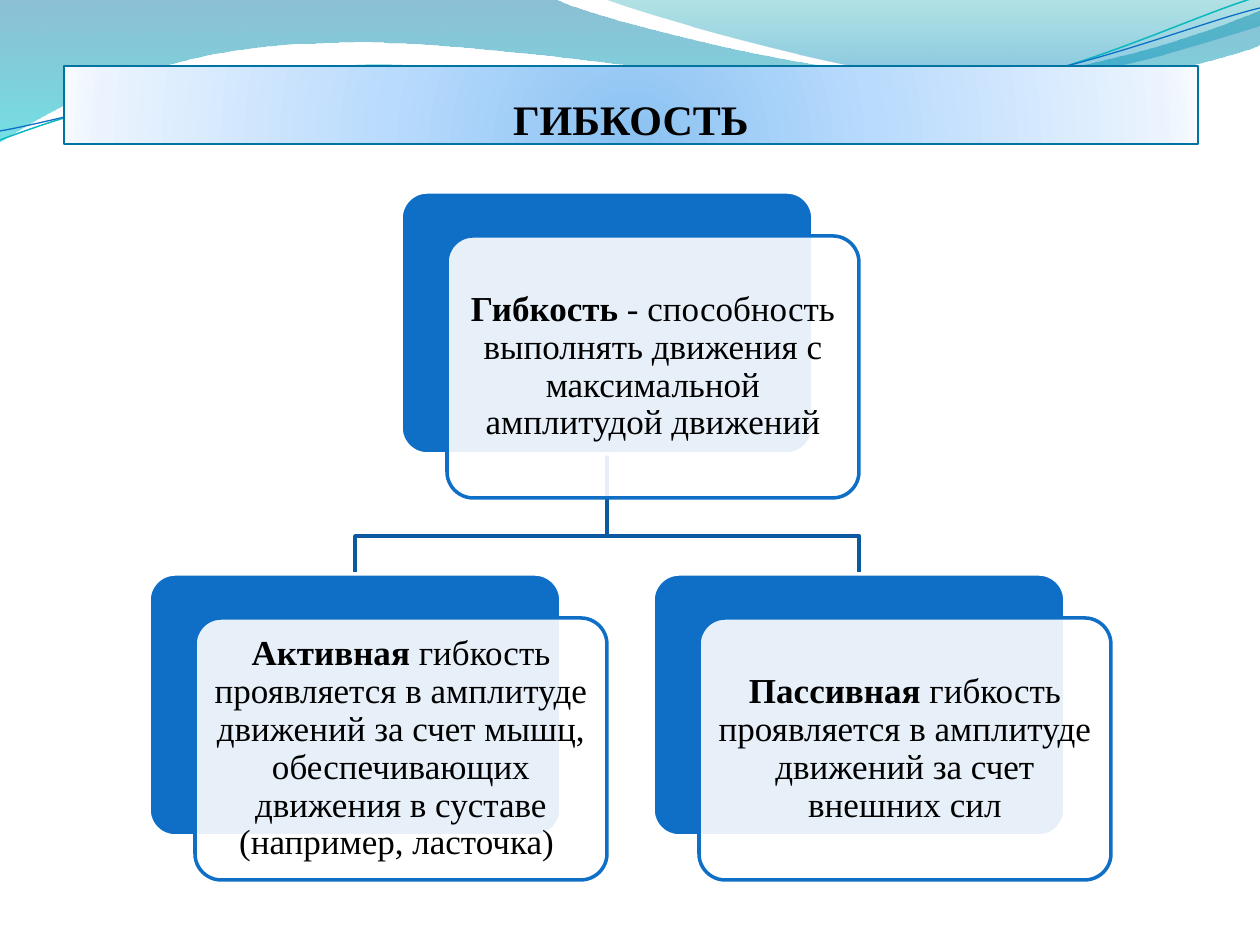
from lxml import etree
from pptx import Presentation
from pptx.dml.color import RGBColor
from pptx.enum.shapes import MSO_SHAPE
from pptx.enum.text import MSO_ANCHOR, MSO_AUTO_SIZE, PP_ALIGN
from pptx.oxml.ns import qn
from pptx.util import Pt

PX = 914400 / 126
FONT = "Times New Roman"
BLUE, DARK_BLUE, TEAL, WHITE, BLACK = "0F6FC6", "0C599F", "0074A1", "FFFFFF", "000000"
ROUNDED = MSO_SHAPE.ROUNDED_RECTANGLE
CENTER, MIDDLE, BOTTOM = PP_ALIGN.CENTER, MSO_ANCHOR.MIDDLE, MSO_ANCHOR.BOTTOM
TITLE_LAYOUT = 5

CARD_W, CARD_H = 412, 262
CARD_DX, CARD_DY = 46, 44
ROOT = (401, 192, "Гибкость",
        " - способность выполнять движения с максимальной амплитудой движений")
BRANCHES = [
    (149, 574, "Активная",
     " гибкость проявляется в амплитуде движений за счет мышц, "
     "обеспечивающих движения в суставе (например, ласточка) "),
    (653, 574, "Пассивная",
     " гибкость проявляется в амплитуде движений за счет внешних сил"),
]

# Outlines: a pair is a straight step, six numbers are a Bezier curve.
WAVES = [
    ([(0, 0), (554, -1), (600, 21, 837, 79, 955, 79), (1075, 79, 1207, 33, 1260, 11),
      (1261, 45), (1239, 55, 1096, 96, 940, 95), (784, 95, 481, 35, 324, 43),
      (163, 45, 58, 105, -1, 142)],
     [(0, TEAL, 45), (100, "00C6CF", 55)]),
    ([(604, -1), (641, 14, 859, 78, 969, 82), (1079, 87, 1211, 40, 1260, 26), (1260, 0)],
     [(0, "00A1A9", 30), (80, "008BBF", 45)]),
]
WAVE_LINES = [
    ([(0, 140), (60, 117, 199, 72, 349, 66), (498, 59, 747, 112, 898, 101),
      (1049, 89, 1182, 19, 1257, -3)], "0AB8BF", 0.85),
    ([(0, 131), (59, 121, 207, 77, 357, 71), (508, 64, 752, 106, 903, 94),
      (1053, 84, 1186, 26, 1260, 8)], BLUE, 0.75),
]
TITLE_STOPS = [(0, "8BC2F1", 100), (43, "B9DBFD", 100),
               (93, "EAF3FE", 100), (100, "F8FBFF", 100)]


def px(n):
    return round(n * PX)


def rgb(value):
    return RGBColor.from_string(value)


def add_alpha(clr, opacity):
    if opacity < 100:
        etree.SubElement(clr, qn("a:alpha"), val=str(opacity * 1000))


def set_fill(sp, color, opacity=100):
    sp.fill.solid()
    sp.fill.fore_color.rgb = rgb(color)
    add_alpha(sp._element.spPr.find(qn("a:solidFill"))[0], opacity)


def set_gradient(sp, stops, circle=None):
    """Fill from top to bottom, or around the circle's fillToRect if given."""
    sp.fill.gradient()
    grad = sp._element.spPr.find(qn("a:gradFill"))
    for child in list(grad):
        grad.remove(child)
    gs_list = etree.SubElement(grad, qn("a:gsLst"))
    for pos, color, opacity in stops:
        gs = etree.SubElement(gs_list, qn("a:gs"), pos=str(pos * 1000))
        add_alpha(etree.SubElement(gs, qn("a:srgbClr"), val=color), opacity)
    if circle:
        node = etree.SubElement(grad, qn("a:path"), path="circle")
        edges = {side: str(pct * 1000) for side, pct in circle.items()}
        etree.SubElement(node, qn("a:fillToRect"), **edges)
    else:
        etree.SubElement(grad, qn("a:lin"), ang="5400000", scaled="1")


def set_line(sp, color, width):
    sp.line.color.rgb = rgb(color)
    sp.line.width = Pt(width)


def add_outline(slide, outline, close):
    """Draw through all nodes, then join each curve's three steps into a Bezier."""
    points = [(px(step[i]), px(step[i + 1]))
              for step in outline for i in range(0, len(step), 2)]
    builder = slide.shapes.build_freeform(*points[0], scale=1.0)
    builder.add_line_segments(points[1:], close=close)
    sp = builder.convert_to_shape()
    sp.shadow.inherit = False
    segments = iter(sp._element.findall(".//" + qn("a:lnTo")))
    for step in outline[1:]:
        first = next(segments)
        if len(step) == 6:
            curve = etree.Element(qn("a:cubicBezTo"))
            first.addprevious(curve)
            for segment in (first, next(segments), next(segments)):
                curve.append(segment[0])
                segment.getparent().remove(segment)
    return sp


def add_wave(slide, outline, stops):
    sp = add_outline(slide, outline, True)
    set_gradient(sp, stops)
    sp.line.fill.background()
    return sp


def add_path_line(slide, outline, color, width):
    sp = add_outline(slide, outline, False)
    sp.fill.background()
    set_line(sp, color, width)
    return sp


def add_background(prs, slide):
    """Draw the waves and hand them over to the slide master."""
    shapes = [add_wave(slide, *wave) for wave in WAVES]
    shapes += [add_path_line(slide, *line) for line in WAVE_LINES]
    tree = prs.slide_master.shapes._spTree
    for i, sp in enumerate(shapes):
        sp._element.nvSpPr.cNvPr.set("id", str(100 + i))
        tree.insert(2 + i, sp._element)


def set_text(sp, runs, size, anchor, margins):
    """Write (text, bold) runs as one centred paragraph."""
    tf = sp.text_frame
    left, top, right, bottom = map(px, margins)
    frame = {"word_wrap": True, "auto_size": MSO_AUTO_SIZE.NONE,
             "vertical_anchor": anchor, "margin_left": left, "margin_top": top,
             "margin_right": right, "margin_bottom": bottom}
    for name, value in frame.items():
        setattr(tf, name, value)
    p = tf.paragraphs[0]
    p.alignment = CENTER
    for text, bold in runs:
        r = p.add_run()
        r.text = text
        for name, value in {"name": FONT, "size": Pt(size), "bold": bold}.items():
            setattr(r.font, name, value)
        r.font.color.rgb = rgb(BLACK)
    return p


def add_title(slide, text):
    sp = slide.shapes.title
    sp.left, sp.top, sp.width, sp.height = map(px, (64, 66, 1134, 78))
    set_gradient(sp, TITLE_STOPS, {"l": 50, "t": 130, "r": 50, "b": -30})
    set_line(sp, TEAL, 0.75)
    set_text(sp, [(text, True)], 24, BOTTOM, (0, 6, 0, 0))


def add_rounded(slide, x, y):
    sp = slide.shapes.add_shape(ROUNDED, px(x), px(y), px(CARD_W), px(CARD_H))
    sp.adjustments[0] = 0.1
    sp.shadow.inherit = False
    return sp


def add_card(slide, x, y, term, definition):
    back = add_rounded(slide, x, y)
    set_fill(back, BLUE)
    set_line(back, WHITE, 2)
    front = add_rounded(slide, x + CARD_DX, y + CARD_DY)
    set_fill(front, WHITE, 90)
    set_line(front, BLUE, 2)
    p = set_text(front, [(term, True), (definition, False)], 20, MIDDLE, (2, 2, 2, 2))
    p.line_spacing = 0.9


def add_branch_line(slide, parent, child):
    x1, y1 = parent[0] + CARD_W // 2, parent[1] + CARD_H
    x2, y2 = child[0] + CARD_W // 2, child[1]
    bend = y2 - 38
    add_path_line(slide, [(x1, y1), (x1, bend), (x2, bend), (x2, y2)], DARK_BLUE, 2)


def main():
    prs = Presentation()
    prs.slide_width, prs.slide_height = px(1260), px(945)
    slide = prs.slides.add_slide(prs.slide_layouts[TITLE_LAYOUT])
    add_background(prs, slide)
    add_title(slide, "ГИБКОСТЬ")
    for branch in reversed(BRANCHES):
        add_branch_line(slide, ROOT, branch)
    for card in [ROOT, *BRANCHES]:
        add_card(slide, *card)
    prs.save("out.pptx")


if __name__ == "__main__":
    main()
